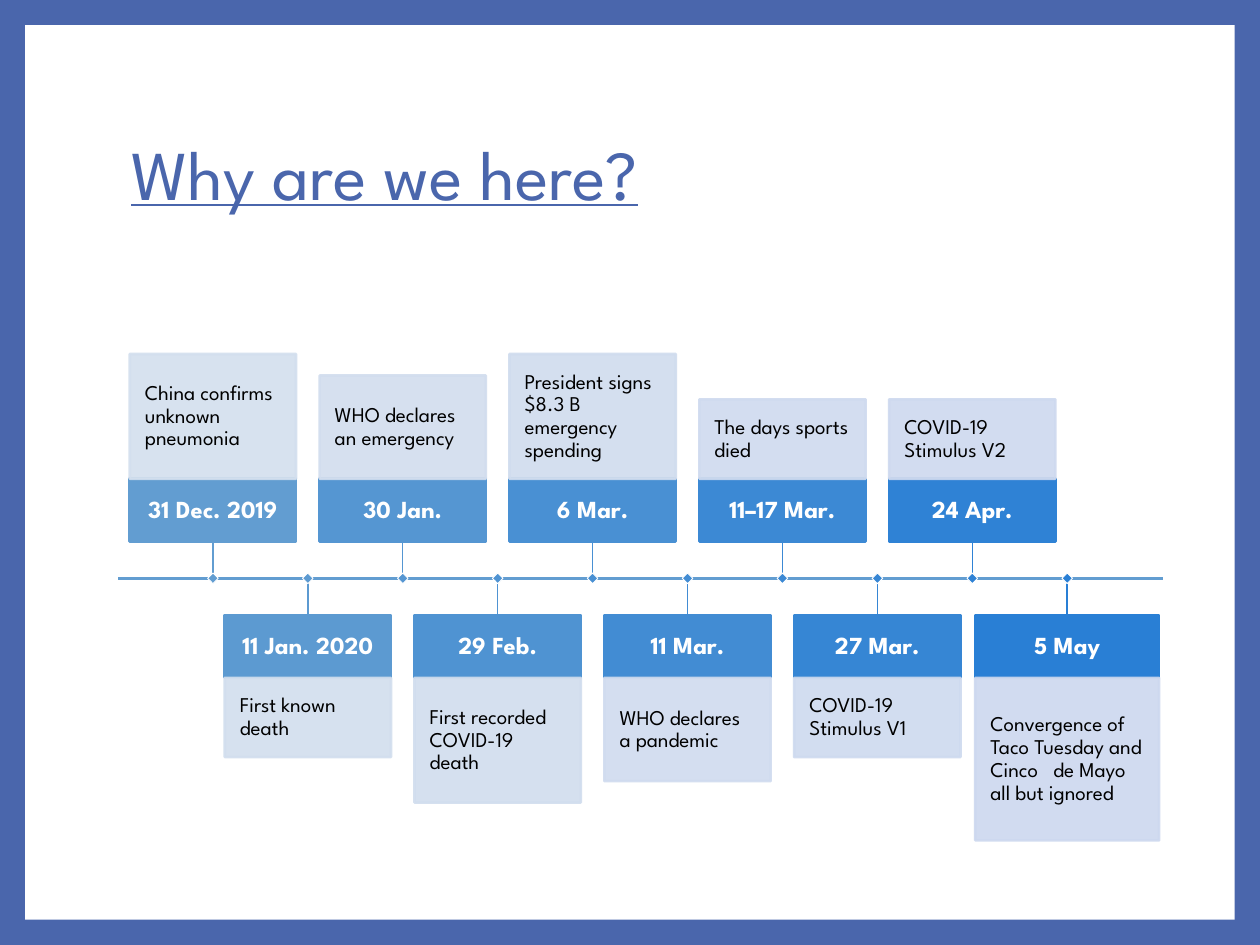
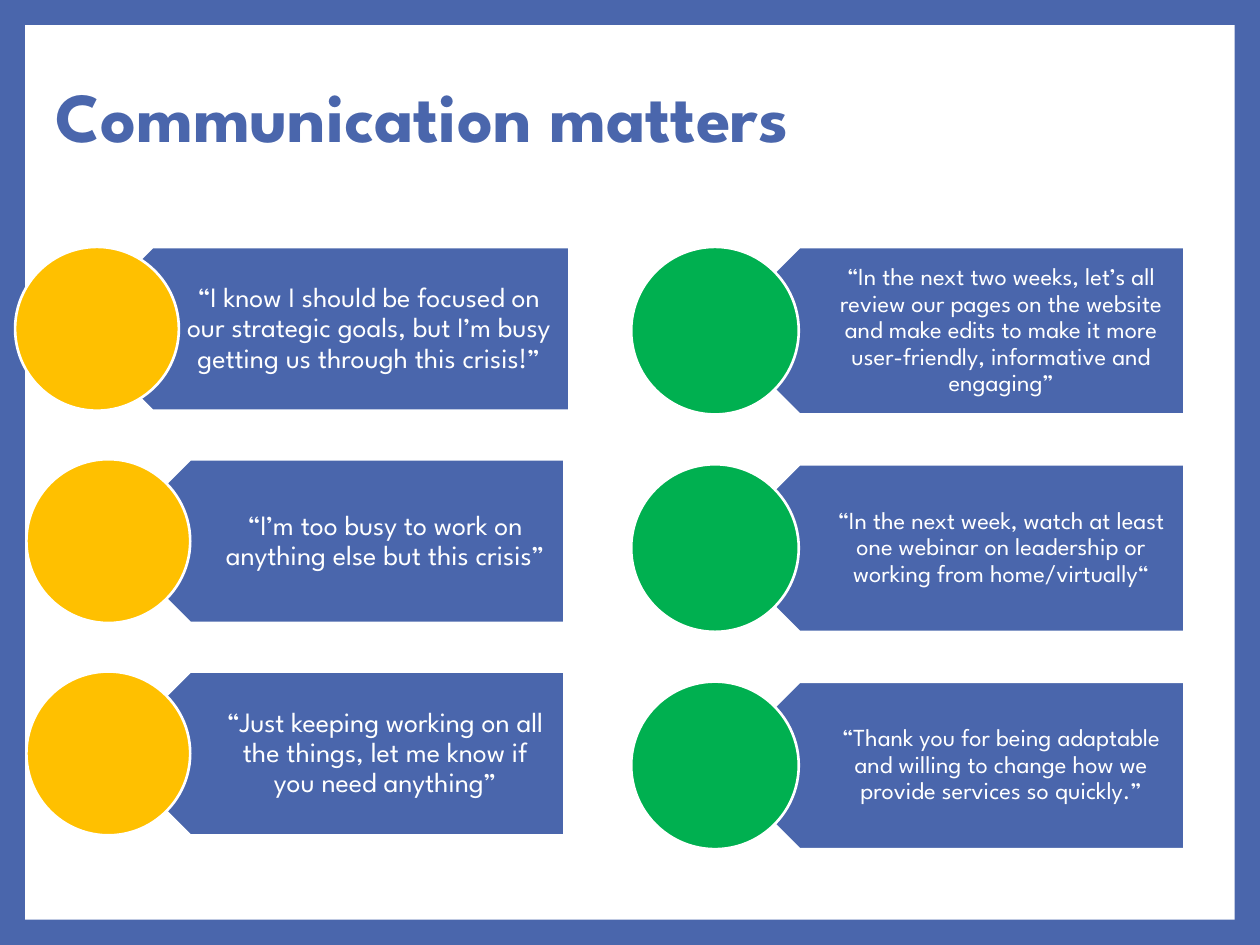
from lxml.etree import SubElement
from pptx import Presentation
from pptx.dml.color import RGBColor
from pptx.enum.shapes import MSO_CONNECTOR, MSO_SHAPE
from pptx.enum.text import MSO_ANCHOR, MSO_AUTO_SIZE, PP_ALIGN
from pptx.oxml.ns import qn
from pptx.util import Emu, Pt

EMU_PER_PX = 9144  # 100 px to the inch
FONT = "League Spartan"
BLUE, WHITE, BLACK = "4A66AC", "FFFFFF", "000000"
YELLOW, GREEN = "FFC000", "00B050"
DATE_RANGE = ("629DD1", "297FD5")
NOTE_RANGE = ("D3DFEE", "CDD8EF")

AXIS_Y, AXIS_LEFT, AXIS_RIGHT = 459, 94, 923
FIRST_X, LAST_X = 169, 847
STEM, DATE_HEIGHT, MARKER = 29, 50, 6

# date, note, height of the note, width of the card
EVENTS = [
    ("31 Dec. 2019", "China confirms unknown pneumonia", 99, 132),
    ("11 Jan. 2020", "First known death", 63, 132),
    ("30 Jan.", "WHO declares an emergency", 82, 132),
    ("29 Feb.", "First recorded COVID-19 death", 99, 132),
    ("6 Mar.", "President signs $8.3 B emergency spending", 99, 132),
    ("11 Mar.", "WHO declares a pandemic", 82, 132),
    ("11–17 Mar.", "The days sports died", 63, 132),
    ("27 Mar.", "COVID-19 Stimulus V1", 63, 132),
    ("24 Apr.", "COVID-19 Stimulus V2", 63, 132),
    ("5 May", "Convergence of Taco Tuesday and Cinco \tde Mayo all but ignored", 129, 146),
]

# quote, left of the circle, left and right of the plate
BUSY_QUOTES = [
    ("“I know I should be focused on our strategic goals, but I’m busy "
     "getting us through this crisis!”", 12, 56, 452),
    ("“I’m too busy to work on anything else but this crisis”", 21, 86, 448),
    ("“Just keeping working on all the things, let me know if you need anything”",
     21, 86, 448),
]
FOCUSED_QUOTES = [
    ("“In the next two weeks, let’s all review our pages on the website and make "
     "edits to make it more user-friendly, informative and engaging”", 501, 568, 940),
    ("“In the next week, watch at least one webinar on leadership or working "
     "from home/virtually“", 501, 568, 940),
    ("“Thank you for being adaptable and willing to change how we provide "
     "services so quickly.”", 501, 568, 940),
]


def px(value):
    return Emu(round(value * EMU_PER_PX))


def rgb(color):
    return RGBColor.from_string(color)


def blend(color_range, t):
    """Return the colour at fraction t between the two ends of a range."""
    start, end = (rgb(c) for c in color_range)
    return "".join(f"{round(a + (b - a) * t):02X}" for a, b in zip(start, end))


def write(shape, text, size, color, bold=False, underline=False,
          align=PP_ALIGN.LEFT, insets=(10, 5, 10, 5)):
    tf = shape.text_frame
    tf.word_wrap = True
    tf.auto_size = MSO_AUTO_SIZE.NONE
    tf.vertical_anchor = MSO_ANCHOR.MIDDLE
    tf.margin_left, tf.margin_top, tf.margin_right, tf.margin_bottom = map(px, insets)
    p = tf.paragraphs[0]
    p.alignment = align
    p.line_spacing = 0.9
    r = p.add_run()
    r.text = text
    r.font.name = FONT
    r.font.size = Pt(size)
    r.font.bold = bold
    r.font.underline = underline
    r.font.color.rgb = rgb(color)


def add_box(slide, kind, left, top, width, height, fill, line=None,
            line_width=1.5, rotation=0, opacity=100):
    sp = slide.shapes.add_shape(kind, px(left), px(top), px(width), px(height))
    sp.shadow.inherit = False
    sp.rotation = rotation
    sp.fill.solid()
    sp.fill.fore_color.rgb = rgb(fill)
    if line:
        sp.line.color.rgb = rgb(line)
        sp.line.width = Pt(line_width)
    else:
        sp.line.fill.background()
    if opacity < 100:
        for clr in sp._element.spPr.iter(qn("a:srgbClr")):
            SubElement(clr, qn("a:alpha"), val=str(opacity * 1000))
    return sp


def add_line(slide, x1, y1, x2, y2, color, width):
    line = slide.shapes.add_connector(MSO_CONNECTOR.STRAIGHT, px(x1), px(y1), px(x2), px(y2))
    line.line.color.rgb = rgb(color)
    line.line.width = Pt(width)
    SubElement(line._element.spPr, qn("a:effectLst"))


def add_frame(prs, slide):
    """Give the master a blue border around a white panel, drawn by way of a slide."""
    master = prs.slide_master
    master.background.fill.solid()
    master.background.fill.fore_color.rgb = rgb(BLUE)
    panel = add_box(slide, MSO_SHAPE.RECTANGLE, 20, 20, 960, 710, WHITE)
    master.shapes._spTree.insert(2, panel._element)


def add_titled_slide(prs, text, left, top, width, **style):
    slide = prs.slides.add_slide(prs.slide_layouts.get_by_name("Title Only"))
    title = slide.shapes.title
    title.left, title.top, title.width, title.height = map(px, (left, top, width, 148))
    write(title, text, 40, BLUE, **style)
    return slide


def add_event(slide, index, date, note, note_height, width):
    """Add a card above the axis for an even index and below it for an odd one."""
    t = index / (len(EVENTS) - 1)
    x = FIRST_X + (LAST_X - FIRST_X) * t
    color, note_color = blend(DATE_RANGE, t), blend(NOTE_RANGE, t)
    if index % 2 == 0:
        stem_end = AXIS_Y - STEM
        date_top = stem_end - DATE_HEIGHT
        note_top = date_top - note_height
    else:
        stem_end = date_top = AXIS_Y + STEM
        note_top = date_top + DATE_HEIGHT
    left = x - width / 2

    date_box = add_box(slide, MSO_SHAPE.RECTANGLE, left, date_top, width, DATE_HEIGHT,
                       color, color)
    write(date_box, date, 14, WHITE, bold=True, align=PP_ALIGN.CENTER, insets=(8, 8, 8, 8))
    note_box = add_box(slide, MSO_SHAPE.RECTANGLE, left, note_top, width, note_height,
                       note_color, note_color, opacity=90)
    write(note_box, note, 12, BLACK, insets=(12, 12, 12, 12))
    add_line(slide, x, stem_end, x, AXIS_Y, color, 0.79)
    add_box(slide, MSO_SHAPE.RECTANGLE, x - MARKER / 2, AXIS_Y - MARKER / 2, MARKER, MARKER,
            color, WHITE, line_width=0.5, rotation=45)


def add_quotes(slide, quotes, circle_color, diameter, pitch, size, insets):
    for row, (quote, circle_left, plate_left, right) in enumerate(quotes):
        top = 196 + row * pitch
        add_box(slide, MSO_SHAPE.PENTAGON, plate_left, top, right - plate_left, diameter,
                BLUE, WHITE, rotation=180)
        text_left = plate_left + diameter / 4
        tb = slide.shapes.add_textbox(px(text_left), px(top), px(right - text_left),
                                      px(diameter))
        write(tb, quote, size, WHITE, align=PP_ALIGN.CENTER, insets=insets)
        add_box(slide, MSO_SHAPE.OVAL, circle_left, top, diameter, diameter,
                circle_color, WHITE)


def main():
    prs = Presentation()
    prs.slide_width, prs.slide_height = px(1000), px(750)

    timeline = add_titled_slide(prs, "Why are we here?", 94, 67, 810, underline=True)
    add_frame(prs, timeline)
    add_line(timeline, AXIS_LEFT, AXIS_Y, AXIS_RIGHT, AXIS_Y, DATE_RANGE[0], 1.5)
    for index, event in enumerate(EVENTS):
        add_event(timeline, index, *event)

    matters = add_titled_slide(prs, "Communication matters", 34, 21, 929, bold=True)
    add_quotes(matters, BUSY_QUOTES, YELLOW, 130, 168.5, 16, (57, 7, 12, 7))
    add_quotes(matters, FOCUSED_QUOTES, GREEN, 133, 172.5, 14, (59, 6, 11, 6))

    prs.save("out.pptx")


if __name__ == "__main__":
    main()
